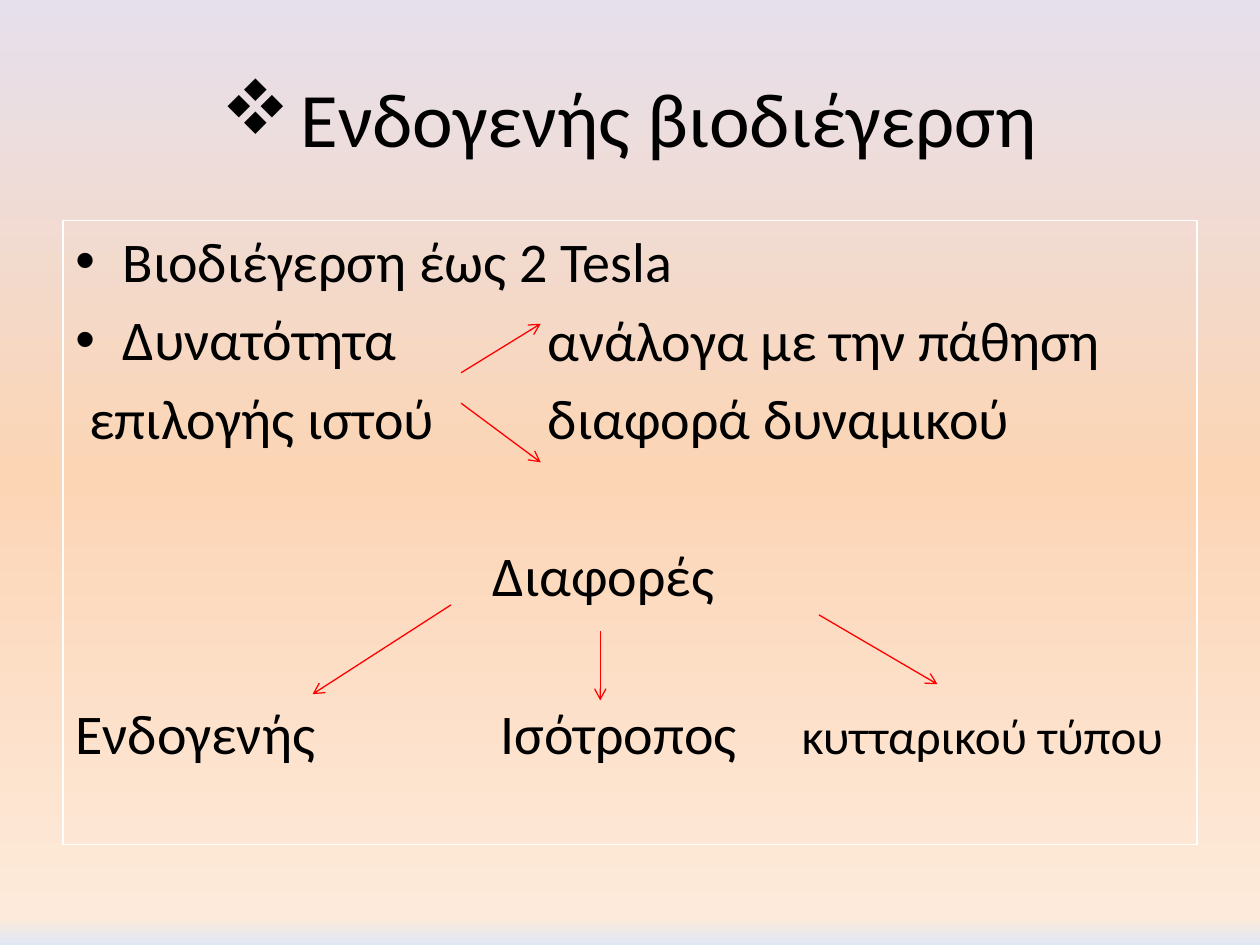
from copy import deepcopy

from pptx import Presentation
from pptx.dml.color import RGBColor
from pptx.enum.shapes import MSO_CONNECTOR
from pptx.enum.text import MSO_ANCHOR, PP_ALIGN
from pptx.oxml.ns import qn
from pptx.util import Pt

LINE = MSO_CONNECTOR.STRAIGHT
TOP, MID = MSO_ANCHOR.TOP, MSO_ANCHOR.MIDDLE
LEFT, CENTER = PP_ALIGN.LEFT, PP_ALIGN.CENTER

HUES = {
    "ink": "000000", "edge": "FFFFFF", "arrow": "FF0000",
    "ice": "DBEEF4", "lilac": "E6E0EC", "peach": "FCD5B5",
    "cream": "FDEADA", "mist": "E1E8F5",
}
STOPS = [(0, "ice"), (0, "lilac"), (0.5, "peach"), (0.97, "cream"), (1, "mist")]
DOT, GEM = ("Arial", "•"), ("Wingdings", "v")
NEAR, FAR = 6.3, 51.6


def hue(name):
    return RGBColor.from_string(HUES[name])


def apply(item, form):
    for key, value in form.items():
        setattr(item, key, value)


def add(root, tag, **form):
    root.append(root.makeelement(qn(tag), form))


class Deck:
    font = "Calibri"
    size = 32
    width = 0.75

    def __init__(self):
        self.file = Presentation()
        apply(self.file, {"slide_width": Pt(720), "slide_height": Pt(540)})
        self.slide = self.file.slides.add_slide(self.file.slide_layouts[6])

    def back(self, stops):
        fill = self.slide.background.fill
        fill.gradient()
        fill.gradient_angle = 270
        group = self.slide.element.find(".//" + qn("a:gsLst"))
        for _ in range(len(stops) - len(group)):
            group.append(deepcopy(group[0]))
        for stop, (place, name) in zip(fill.gradient_stops, stops):
            stop.color.rgb = hue(name)
            stop.position = place

    def box(self, area, anchor=TOP, edge=None):
        shape = self.slide.shapes.add_textbox(*map(Pt, area))
        apply(shape.text_frame, {"word_wrap": True, "vertical_anchor": anchor})
        if edge:
            apply(shape.line, {"width": Pt(self.width)})
            shape.line.color.rgb = hue(edge)
        return shape.text_frame

    def para(self, frame, text, size=None, gap=NEAR, align=LEFT, margin=0, mark=None):
        para = frame.paragraphs[0]
        if para.runs:
            para = frame.add_paragraph()
        apply(para, {"alignment": align, "space_before": Pt(gap)})
        props = para._p.get_or_add_pPr()
        props.set("marL", str(Pt(margin)))
        props.set("indent", str(Pt(-margin if mark else 0)))
        if mark:
            face, char = mark
            add(props, "a:buFont", typeface=face)
            add(props, "a:buChar", char=char)
        run = para.add_run()
        run.text = text
        apply(run.font, {"name": self.font, "size": Pt(size or self.size)})
        run.font.color.rgb = hue("ink")

    def arrow(self, ends):
        shape = self.slide.shapes.add_connector(LINE, *map(Pt, ends))
        shape.line.color.rgb = hue("arrow")
        shape.line.width = Pt(self.width)
        props = shape._element.spPr
        add(props.find(qn("a:ln")), "a:tailEnd", type="arrow")
        add(props, "a:effectLst")

    def save(self):
        self.file.save("out.pptx")


def main():
    deck = Deck()
    deck.back(STOPS)

    title = deck.box((36, 21.6, 648, 90), anchor=MID)
    deck.para(title, "Ενδογενής βιοδιέγερση", 44, gap=0, align=CENTER, margin=45, mark=GEM)

    body = deck.box((36, 126, 648, 356.4), edge="edge")
    for text in ("Βιοδιέγερση έως 2 Tesla", "Δυνατότητα"):
        deck.para(body, text, margin=27, mark=DOT)
    deck.para(body, "επιλογής ιστού", margin=8)
    deck.para(body, "Διαφορές", gap=FAR, margin=238.5)
    deck.para(body, "Ενδογενής", gap=FAR)

    split = deck.box((306, 171, 360, 97))
    for text in ("ανάλογα με την πάθηση", "διαφορά δυναμικού"):
        deck.para(split, text)

    for text, size, area in (
        ("Ισότροπος", 32, (279, 395.7, 165, 52)),
        ("κυτταρικού τύπου", 28, (451, 399.5, 233, 48)),
    ):
        deck.para(deck.box(area), text, size)

    for ends in (
        (263.5, 213, 309, 185),
        (263.5, 230.4, 309, 264.2),
        (257.8, 345.6, 178.6, 396.7),
        (468, 351.4, 535.7, 391),
        (343, 360.7, 343, 400.3),
    ):
        deck.arrow(ends)
    deck.save()


if __name__ == "__main__":
    main()
